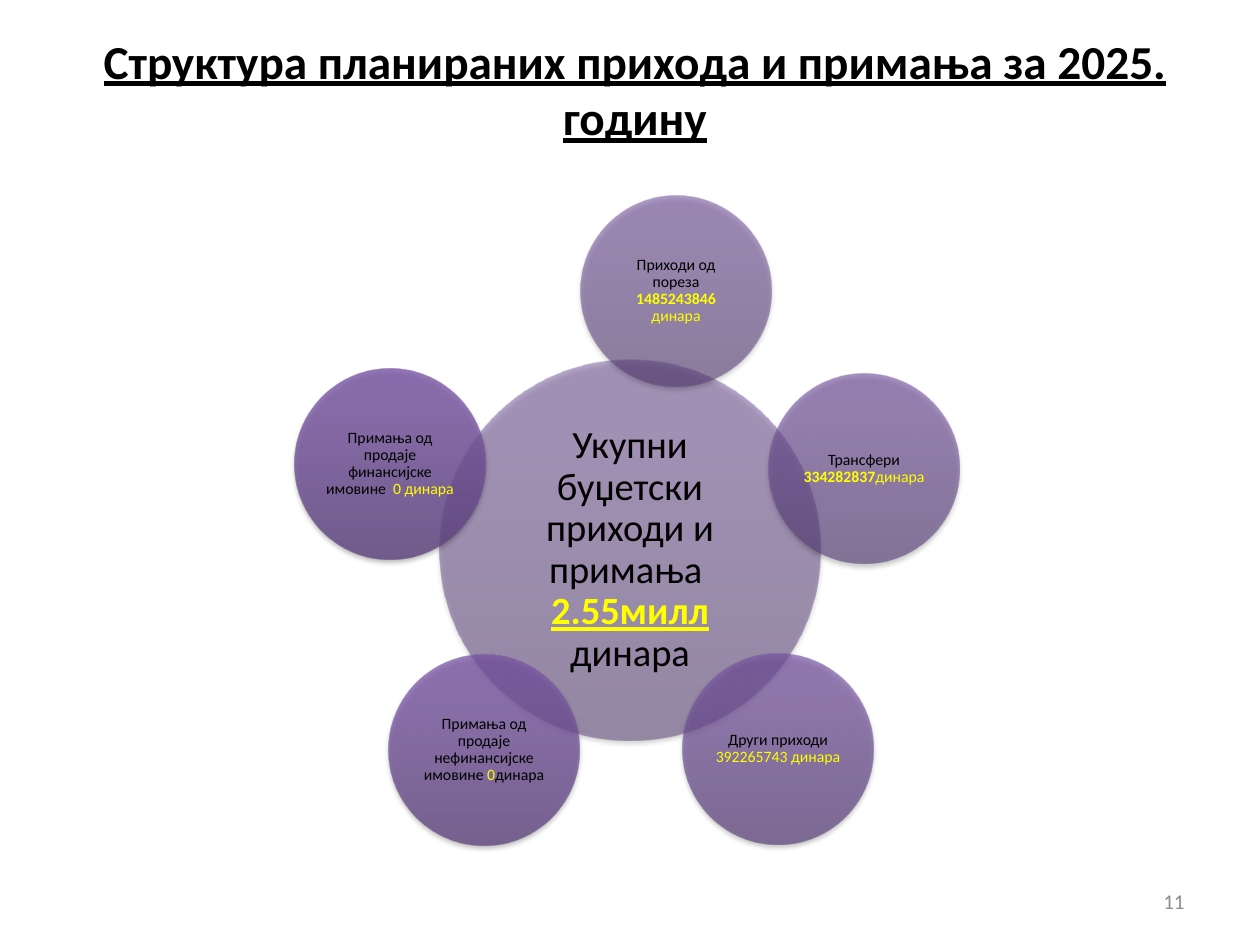
import math
from dataclasses import dataclass

from lxml import etree
from pptx import Presentation
from pptx.dml.color import RGBColor
from pptx.enum.shapes import MSO_SHAPE
from pptx.enum.text import MSO_ANCHOR, PP_ALIGN
from pptx.oxml.ns import qn
from pptx.util import Pt

EMU_PER_PX = 914400 / 126
OVAL = MSO_SHAPE.OVAL
MIDDLE = MSO_ANCHOR.MIDDLE
CENTER, RIGHT = PP_ALIGN.CENTER, PP_ALIGN.RIGHT
TITLE_ONLY = 5
LINE_BREAK = "\n"


@dataclass(frozen=True)
class Theme:
    font: str = "Calibri"
    ink: str = "000000"
    accent: str = "FFFF00"
    muted: str = "8C8C8C"
    title_size: int = 27
    total_size: int = 22
    part_size: int = 9
    number_size: int = 12


THEME = Theme()
AMOUNT = {"color": THEME.accent}
BOLD_AMOUNT = {"color": THEME.accent, "bold": True}
TOTAL_AMOUNT = {"color": THEME.accent, "bold": True, "underline": True}

TOTAL_LEFT, TOTAL_TOP, TOTAL_DIAMETER = 440, 360, 380
TOTAL_COLORS = ("563D74", "705097", "704F99")
TOTAL_SPANS = [
    ("Укупни буџетски приходи и примања  ", {}),
    ("2.55милл", TOTAL_AMOUNT),
    (" динара", {}),
]

PART_DIAMETER = 190
# Left, top, gradient colours and text of each part, clockwise from the top
PARTS = [
    (581, 196, ("583E77", "72519A", "73509C"), [
        ("Приходи од", {}), (LINE_BREAK, {}), ("пореза", {}), (LINE_BREAK, {}),
        ("1485243846", BOLD_AMOUNT), (LINE_BREAK, {}), ("динара", AMOUNT)]),
    (769, 374, ("5A407A", "75539E", "7551A0"), [
        ("Трансфери ", {}), ("334282837", BOLD_AMOUNT), ("динара", AMOUNT)]),
    (683, 654, ("5C417C", "7754A1", "7753A4"), [
        ("Други приходи ", {}), ("392265743 динара", AMOUNT)]),
    (389, 655, ("5E427E", "7956A4", "7A55A6"), [
        ("Примања од продаје нефинансијске имовине ", {}), ("0", AMOUNT),
        ("динара", {})]),
    (295, 369, ("5F4580", "7C59A6", "7C58A8"), [
        ("Примања од продаје финансијске имовине  ", {}), ("0 динара", AMOUNT)]),
]
FIRST_OPACITY, OPACITY_STEP = 50, 6


def px(length):
    return round(length * EMU_PER_PX)


def place(item, box):
    for name, length in zip(("left", "top", "width", "height"), box):
        setattr(item, name, px(length))


def write_text(frame, spans, size, align=CENTER, line_spacing=None, inset=None):
    frame.word_wrap = True
    frame.vertical_anchor = MIDDLE
    if inset is not None:
        for side in ("left", "top", "right", "bottom"):
            setattr(frame, f"margin_{side}", px(inset))
    para = frame.paragraphs[0]
    para.alignment = align
    para.line_spacing = line_spacing
    for text, style in spans:
        if text == LINE_BREAK:
            para.add_line_break()
            continue
        span = para.add_run()
        span.text = text
        values = {"name": THEME.font, "size": Pt(size), "bold": False, **style}
        color = values.pop("color", THEME.ink)
        for name, value in values.items():
            setattr(span.font, name, value)
        span.font.color.rgb = RGBColor.from_string(color)


def add_color(parent, color, opacity):
    node = etree.SubElement(parent, qn("a:srgbClr"), val=color)
    etree.SubElement(node, qn("a:alpha"), val=str(opacity * 1000))


def fill_gradient(shape, colors, opacity):
    """Fill from bottom to top with three translucent stops."""
    shape.fill.gradient()
    shape.fill.gradient_angle = 90
    stops = shape.element.spPr.find(".//" + qn("a:gsLst"))
    for stop in list(stops):
        stops.remove(stop)
    for position, color in zip((0, 80, 100), colors):
        stop = etree.SubElement(stops, qn("a:gs"), pos=str(position * 1000))
        add_color(stop, color, opacity)


def add_shadow(shape):
    shape.shadow.inherit = False
    effects = shape.element.spPr.find(qn("a:effectLst"))
    shadow = etree.SubElement(
        effects, qn("a:outerShdw"), blurRad=str(Pt(3.1)), dist=str(Pt(1.8)),
        dir="5400000", rotWithShape="0")
    add_color(shadow, THEME.ink, 35)


def add_circle(page, left, top, diameter, colors, opacity):
    circle = page.shapes.add_shape(
        OVAL, *map(px, (left, top, diameter, diameter)))
    fill_gradient(circle, colors, opacity)
    circle.line.fill.background()
    add_shadow(circle)


def add_circle_label(page, left, top, diameter, spans, size, inset):
    """Put text in the square inscribed in a circle, clear of its shadow."""
    side = round(diameter / math.sqrt(2))
    gap = (diameter - side) / 2
    label = page.shapes.add_textbox(
        *map(px, (left + gap, top + gap, side, side)))
    write_text(label.text_frame, spans, size, line_spacing=0.9, inset=inset)


def add_title(page, text):
    title = page.shapes.title
    place(title, (68, 35, 1134, 107))
    write_text(title.text_frame, [(text, {"bold": True, "underline": True})],
               THEME.title_size)


def add_page_number(page, number):
    box = page.shapes.add_textbox(*map(px, (903, 876, 294, 50)))
    write_text(box.text_frame, [(number, {"color": THEME.muted})],
               THEME.number_size, align=RIGHT)


def main():
    deck = Presentation()
    deck.slide_width, deck.slide_height = px(1260), px(945)
    page = deck.slides.add_slide(deck.slide_layouts[TITLE_ONLY])
    add_title(page, "Структура планираних прихода и примања за 2025. годину")
    add_page_number(page, "11")
    total = (TOTAL_LEFT, TOTAL_TOP, TOTAL_DIAMETER)
    add_circle(page, *total, TOTAL_COLORS, FIRST_OPACITY)
    add_circle_label(page, *total, TOTAL_SPANS, THEME.total_size, inset=4)
    for index, (left, top, colors, spans) in enumerate(PARTS, start=1):
        part = (left, top, PART_DIAMETER)
        add_circle(page, *part, colors, FIRST_OPACITY + index * OPACITY_STEP)
        add_circle_label(page, *part, spans, THEME.part_size, inset=1)
    deck.save("out.pptx")


if __name__ == "__main__":
    main()
